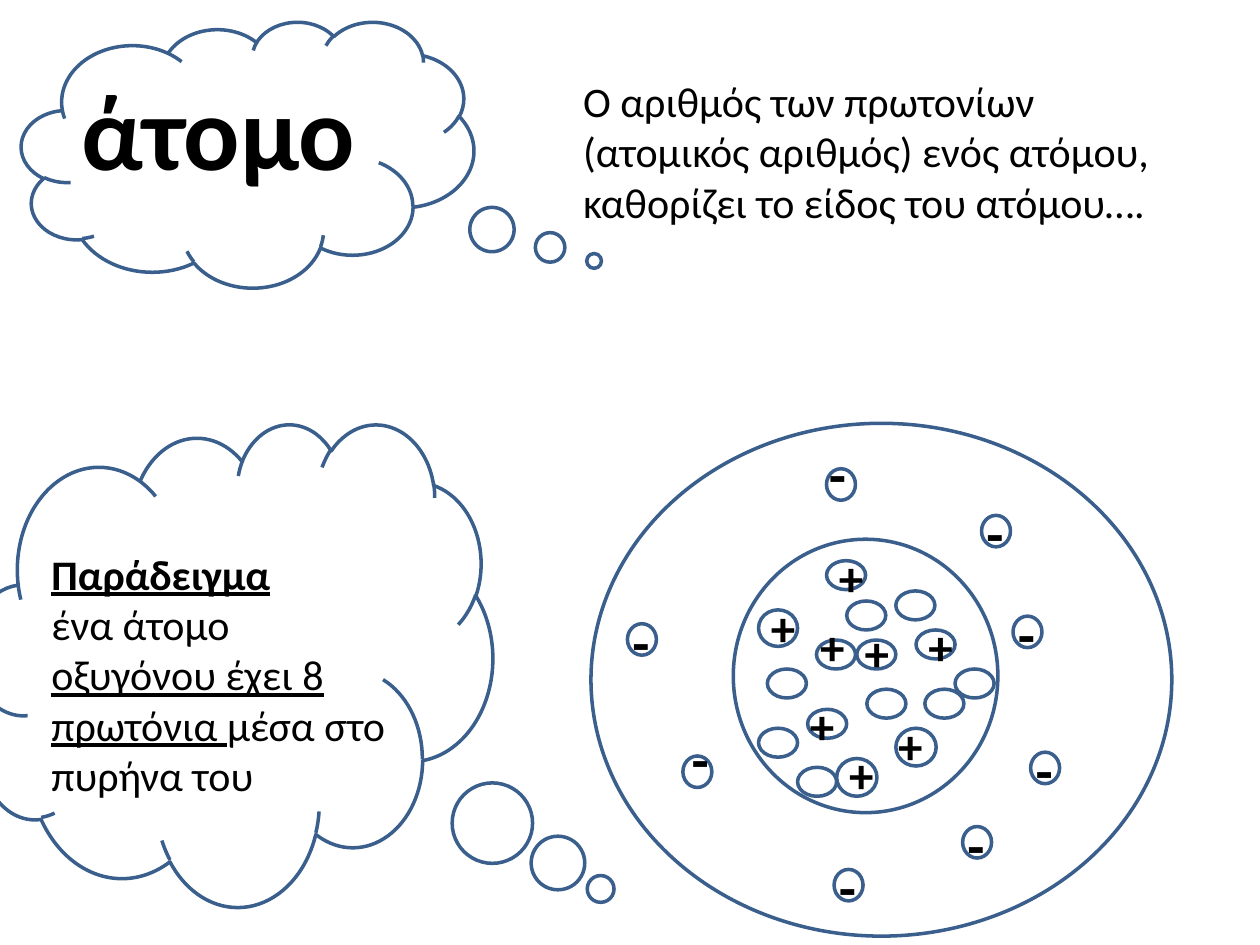
from dataclasses import dataclass

from pptx import Presentation
from pptx.dml.color import RGBColor
from pptx.enum.shapes import MSO_SHAPE as Shape
from pptx.enum.text import MSO_AUTO_SIZE as AutoSize
from pptx.util import Inches, Pt


@dataclass(frozen=True)
class Theme:
    """Colours, font and type sizes of the deck."""
    font: str = "Calibri"
    ink: RGBColor = RGBColor(0x00, 0x00, 0x00)
    outline: RGBColor = RGBColor(0x3A, 0x5F, 0x8C)
    line: float = 2
    title: int = 60
    body: int = 24
    plus: int = 28
    minus: int = 32


class Sketch:
    """Draws outlined shapes and text on a page of 100 columns by 75 rows."""

    def __init__(self, deck, theme):
        """Add a blank page to the deck and measure its grid cell."""
        self.theme = theme
        self.page = deck.slides.add_slide(deck.slide_layouts[6])
        self.column = deck.slide_width / 100
        self.row = deck.slide_height / 75

    def place(self, left, top, width, height):
        """Turn grid columns and rows into slide lengths."""
        return (round(left * self.column), round(top * self.row),
                round(width * self.column), round(height * self.row))

    def outline(self, kind, area, adjust=()):
        """Draw an unfilled shape with the theme outline."""
        shape = self.page.shapes.add_shape(kind, *self.place(*area))
        for index, value in enumerate(adjust):
            shape.adjustments[index] = value
        shape.shadow.inherit = False
        shape.fill.background()
        shape.line.color.rgb = self.theme.outline
        shape.line.width = Pt(self.theme.line)

    def circle(self, *area):
        """Draw an ellipse."""
        self.outline(Shape.OVAL, area)

    def cloud(self, area, tail):
        """Draw a thought cloud whose bubbles lead to the tail."""
        self.outline(Shape.CLOUD_CALLOUT, area, tail)

    def text(self, area, paragraphs, size, bold=None):
        """Write paragraphs given as lists of (text, bold, underline) spans."""
        box = self.page.shapes.add_textbox(*self.place(*area))
        frame = box.text_frame
        frame.word_wrap = True
        frame.auto_size = AutoSize.SHAPE_TO_FIT_TEXT
        for index, spans in enumerate(paragraphs):
            para = frame.add_paragraph() if index else frame.paragraphs[0]
            for words, strong, underline in spans:
                span = para.add_run()
                span.text = words
                span.font.bold = strong
                span.font.underline = underline
            para.font.name = self.theme.font
            para.font.size = Pt(size)
            para.font.bold = bold
            para.font.color.rgb = self.theme.ink

    def label(self, area, words, size, bold=None):
        """Write one plain paragraph."""
        self.text(area, [[(words, bold, None)]], size, bold)

    def electron(self, left, top, shift=-0.6, lift=-1.8):
        """Draw an electron with its minus sign."""
        self.circle(left, top, 2.3, 2.5)
        self.label((left + shift, top + lift, 2.8, 5.1), "-", self.theme.minus, True)

    def proton(self, left, top, width=3.1, height=2.3, shift=0, lift=-1.6, room=3.1):
        """Draw a proton with its plus sign."""
        self.circle(left, top, width, height)
        self.label((left + shift, top + lift, room, 5.7), "+", self.theme.plus, True)

    def neutron(self, left, top):
        """Draw a neutron."""
        self.circle(left, top, 3.1, 2.3)


ELECTRONS = [
    (80.4, 48.9), (76.4, 65.6), (81.8, 59.7), (49.8, 49.5), (77.9, 40.9), (66.2, 69),
    (54.2, 60, -0.3, -3), (65.6, 37.2, -0.8, -2.8),
]
PROTONS = [
    dict(left=65.6, top=44.5, lift=-1.5, room=3.9),
    dict(left=60.2, top=48.4, height=2.9, lift=-1.5),
    dict(left=68, top=50.8, shift=-0.1, lift=-1.9, room=1.7),
    dict(left=66.4, top=60.2, width=3.2, height=3, room=2.8),
    dict(left=71.1, top=57.8, width=3.2, height=3, shift=-0.8, lift=-1.5, room=2.8),
    dict(left=64.8, top=50.8, shift=-0.7, lift=-2.4),
    dict(left=64.1, top=56.3, shift=-0.8),
    dict(left=72.7, top=50),
]
NEUTRONS = [
    (71.1, 46.9), (73.4, 54.7), (67.2, 47.7), (60.9, 53.1),
    (60.2, 57.8), (75.8, 53.1), (63.3, 60.9), (68.8, 54.7),
]
EXAMPLE = [
    [("Παράδειγμα", True, True)],
    [("ένα άτομο ", None, None),
     ("οξυγόνου έχει 8 πρωτόνια ", None, True),
     ("μέσα στο πυρήνα του", None, None)],
]
RULE = ("Ο αριθμός των πρωτονίων (ατομικός αριθμός) ενός ατόμου, "
        "καθορίζει το είδος του ατόμου….")


def main():
    """Build the page about the atom and save it."""
    deck = Presentation()
    deck.slide_width, deck.slide_height = Inches(10), Inches(7.5)
    theme = Theme()
    sketch = Sketch(deck, theme)

    sketch.cloud((1.7, 1.7, 35.9, 21.1), (0.766, 0.401))
    sketch.label((5.5, 4.7, 26.6, 11.1), "άτομο", theme.title, True)
    sketch.label((45.3, 5.5, 50, 13.1), RULE, theme.body)
    sketch.cloud((-2.3, 33.6, 41.4, 38.3), (0.707, 0.465))
    sketch.text((3.1, 43, 28.9, 21.2), EXAMPLE, theme.body)

    sketch.circle(46.9, 33.6, 46.1, 40.7)
    sketch.circle(58.2, 42.8, 21, 21.7)
    for electron in ELECTRONS:
        sketch.electron(*electron)
    for neutron in NEUTRONS:
        sketch.neutron(*neutron)
    for proton in PROTONS:
        sketch.proton(**proton)

    deck.save("out.pptx")


if __name__ == "__main__":
    main()
